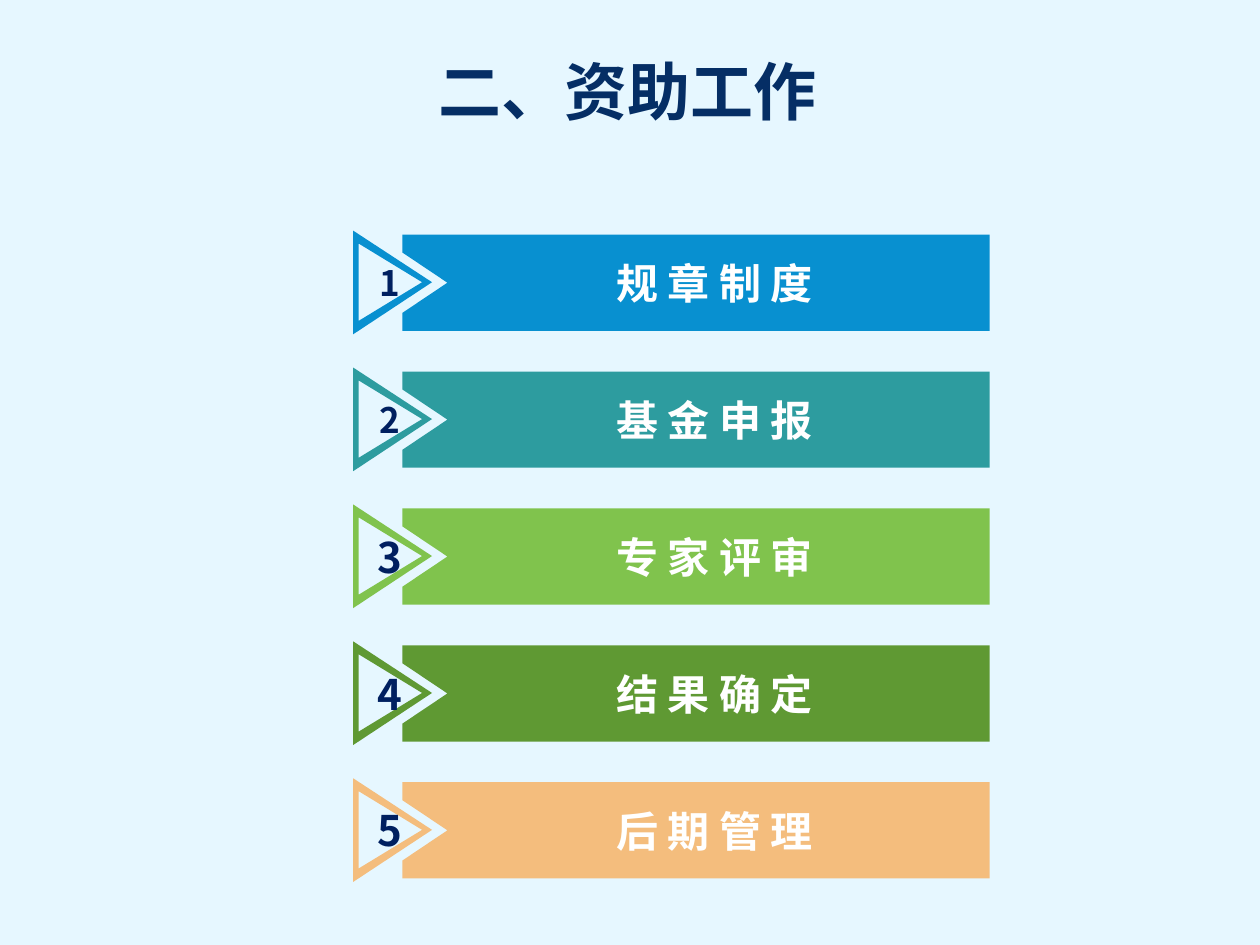
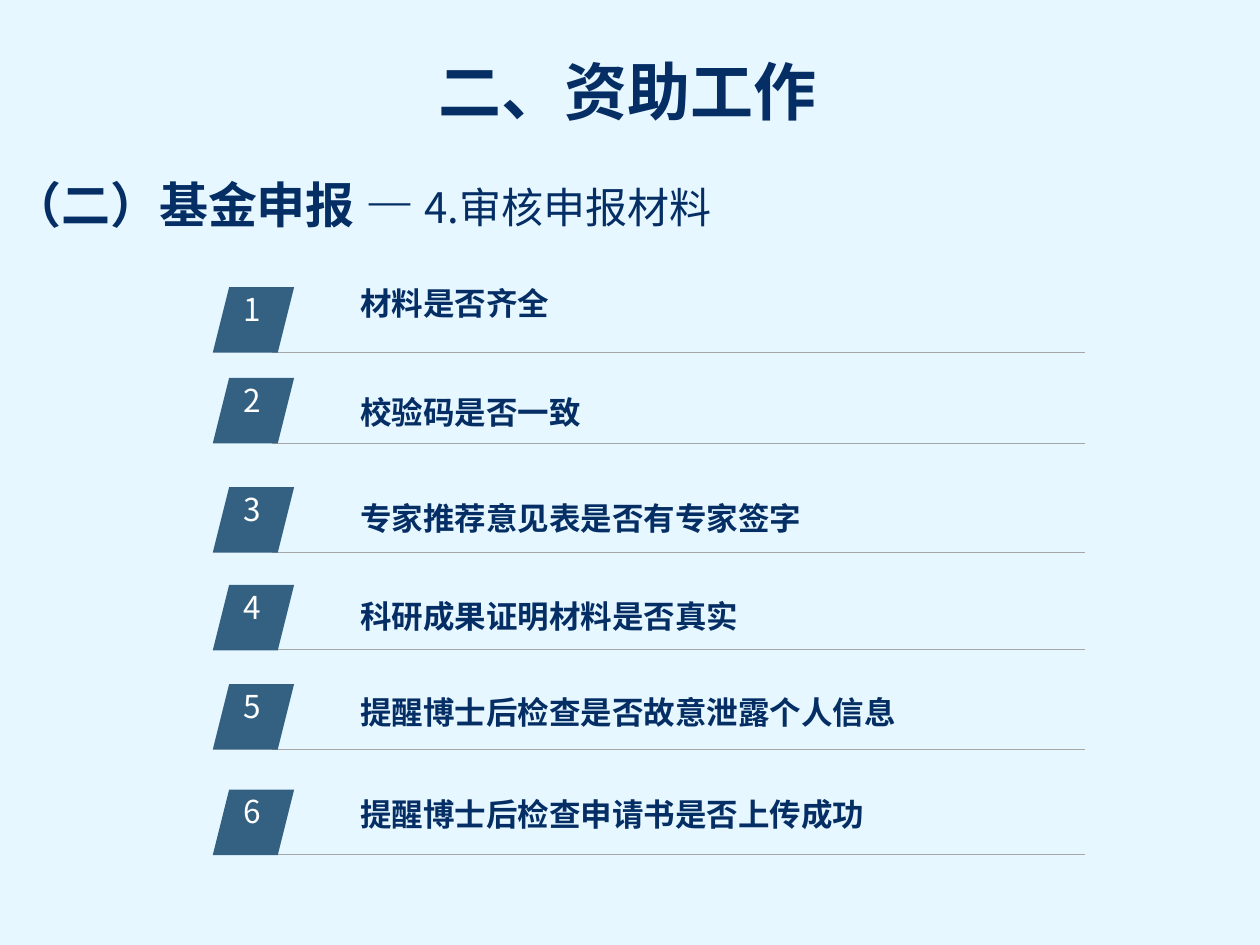
from lxml import etree
from pptx import Presentation
from pptx import util as u
from pptx.dml import color
from pptx.enum import shapes as kinds, text as t
from pptx.oxml import ns

SKY = color.RGBColor(0xE6, 0xF7, 0xFF)
NAVY = color.RGBColor(0x05, 0x2E, 0x65)
INK = color.RGBColor(0x00, 0x20, 0x60)
WHITE = color.RGBColor(0xFF, 0xFF, 0xFF)
STEEL = color.RGBColor(0x34, 0x61, 0x82)
GREY = color.RGBColor(0xA6, 0xA6, 0xA6)
BLUE = color.RGBColor(0x08, 0x90, 0xD0)
TEAL = color.RGBColor(0x2D, 0x9C, 0x9F)
LIME = color.RGBColor(0x80, 0xC3, 0x4D)
GREEN = color.RGBColor(0x5F, 0x99, 0x33)
ORANGE = color.RGBColor(0xF4, 0xBD, 0x7D)

SANS = "Noto Sans CJK SC"
CENTER = {"alignment": t.PP_ALIGN.CENTER}
TITLE_FONT = {"name": SANS, "size": u.Pt(36), "bold": True}
BAR_FONT = {"name": SANS, "size": u.Pt(24), "bold": True}
BADGE_FONT = {"name": SANS, "size": u.Pt(18), "bold": False}
CHECK_FONT = {"name": "Arial", "size": u.Pt(18), "bold": True}

STEPS = [
    ("规 章 制 度", BLUE, 20),
    ("基 金 申 报", TEAL, 20),
    ("专 家 评 审", LIME, 24),
    ("结 果 确 定", GREEN, 24),
    ("后 期 管 理", ORANGE, 24),
]
STEP_PITCH = 2.76
ARROW_RIM = [(0, 0), (1.59, 1.04), (0, 2.09)]
ARROW_HOLE = [(0.11, 0.26), (0.11, 1.82), (1.39, 1.04)]
NOTCHED_BAR = [(0, 0), (11.84, 0), (11.84, 1.94), (0, 1.94),
               (0, 1.58), (0.91, 0.97), (0, 0.36)]

CHECKS = [
    ("材料是否齐全", 5.79, 5.61, 1),
    ("校验码是否一致", 7.62, 7.8, 1),
    ("专家推荐意见表是否有专家签字", 9.82, 9.93, 1),
    ("科研成果证明材料是否真实", 11.79, 11.53, 1.5),
    ("提醒博士后检查是否故意泄露个人信息", 13.79, 13.84, 1),
    ("提醒博士后检查申请书是否上传成功", 15.92, 15.52, 1.5),
]


def apply(target, values):
    for name, value in values.items():
        setattr(target, name, value)


def write(paragraph, words, font, ink):
    run = paragraph.add_run()
    run.text = words
    apply(run.font, font)
    run.font.color.rgb = ink
    east_asian = etree.SubElement(run.font._element, ns.qn("a:ea"))
    east_asian.set("typeface", SANS)


def add_text(parent, box, words, font, ink, layout):
    frame = parent.add_textbox(*map(u.Cm, box)).text_frame
    frame.word_wrap = True
    paragraph = frame.paragraphs[0]
    apply(paragraph, layout)
    write(paragraph, words, font, ink)
    return paragraph


def paint(shape, fill):
    shape.shadow.inherit = False
    shape.fill.solid()
    shape.fill.fore_color.rgb = fill
    shape.line.fill.background()


def add_outline(parent, left, top, contours, fill, words, font, ink, inset):
    builder = None
    for contour in contours:
        points = [(u.Cm(left + x), u.Cm(top + y)) for x, y in contour]
        if builder is None:
            builder = parent.build_freeform(*points[0])
        else:
            builder.move_to(*points[0])
        builder.add_line_segments(points[1:], close=True)
    outline = builder.convert_to_shape()
    paint(outline, fill)
    frame = outline.text_frame
    apply(frame, {"margin_left": u.Cm(inset), "margin_right": u.Cm(0.25),
                  "margin_top": u.Cm(0.13), "margin_bottom": u.Cm(0.13),
                  "vertical_anchor": t.MSO_ANCHOR.MIDDLE, "word_wrap": True})
    apply(frame.paragraphs[0], CENTER)
    write(frame.paragraphs[0], words, font, ink)


def add_rule(parent, left, right, y):
    rule = parent.add_connector(kinds.MSO_CONNECTOR.STRAIGHT,
                                *map(u.Cm, (left, y, right, y)))
    rule.line.color.rgb = GREY
    rule.line.width = u.Pt(0.5)
    etree.SubElement(rule._element.spPr, ns.qn("a:effectLst"))


def add_titled_slide(deck):
    slide = deck.slides.add_slide(deck.slide_layouts[6])
    slide.background.fill.solid()
    slide.background.fill.fore_color.rgb = SKY
    add_text(slide.shapes, (0.41, 0.94, 24.49, 1.78), "二、资助工作",
             TITLE_FONT, NAVY, CENTER)
    return slide.shapes


def add_step(parent, index, words, fill, number_size):
    step = parent.add_group_shape().shapes
    drop = index * STEP_PITCH
    add_outline(step, 7.12, 4.65 + drop, [ARROW_HOLE, ARROW_RIM], fill,
                str(index + 1), {**BAR_FONT, "size": u.Pt(number_size)}, INK, 0.15)
    add_outline(step, 8.11, 4.73 + drop, [NOTCHED_BAR], fill,
                words, BAR_FONT, WHITE, 0.99)


def add_check(parent, number, words, top, words_top, spacing):
    marker = parent.add_group_shape().shapes
    add_rule(marker, 5.49, 21.87, top + 1.31)
    badge = marker.add_shape(kinds.MSO_SHAPE.PARALLELOGRAM,
                             *map(u.Cm, (4.29, top, 1.64, 1.32)))
    paint(badge, STEEL)
    add_text(marker, (4.29, top - 0.07, 1.6, 1.07), str(number),
             BADGE_FONT, WHITE, CENTER)
    add_text(parent, (7.01, words_top, 15.19, 1.02), words, CHECK_FONT, NAVY,
             {"line_spacing": spacing})


def add_section_heading(parent):
    heading = add_text(parent, (0, 3.4, 21.69, 1.6), "（二）基金申报 —",
                       {**TITLE_FONT, "size": u.Pt(28)}, NAVY,
                       {"space_before": u.Pt(4)})
    indent = u.Cm(0.3)
    properties = heading._p.get_or_add_pPr()
    properties.set("marL", str(indent))
    properties.set("indent", str(-indent))
    write(heading, " ", BAR_FONT, NAVY)
    write(heading, "4.审核申报材料", {**BAR_FONT, "bold": False}, NAVY)


def main():
    deck = Presentation()
    apply(deck, {"slide_width": u.Cm(25.4), "slide_height": u.Cm(19.05)})

    overview = add_titled_slide(deck)
    for index, step in enumerate(STEPS):
        add_step(overview, index, *step)

    review = add_titled_slide(deck)
    for number, check in enumerate(CHECKS, 1):
        add_check(review, number, *check)
    add_section_heading(review)

    deck.save("out.pptx")


if __name__ == "__main__":
    main()
